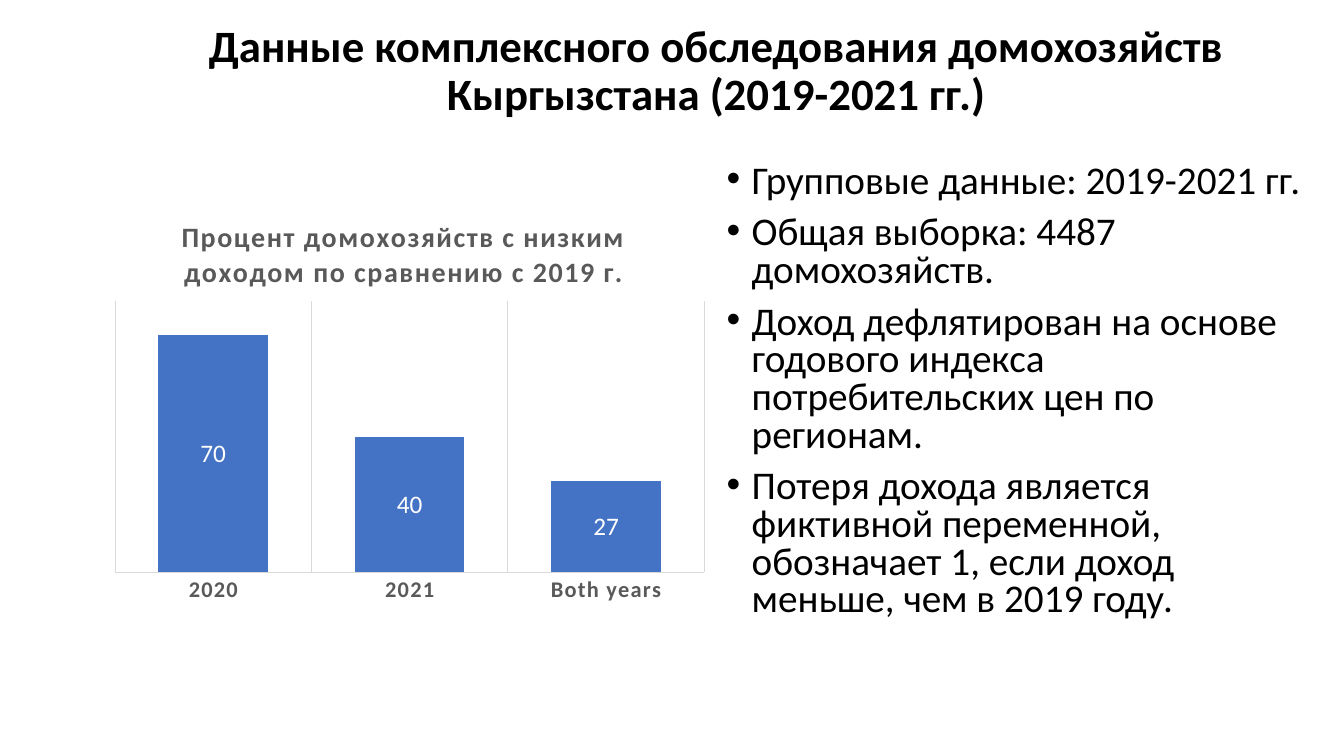
from dataclasses import dataclass

from lxml import etree
from pptx import Presentation
from pptx.chart.data import CategoryChartData
from pptx.dml.color import RGBColor
from pptx.enum.chart import XL_CHART_TYPE, XL_LABEL_POSITION, XL_TICK_MARK
from pptx.enum.text import MSO_ANCHOR, PP_ALIGN
from pptx.oxml import parse_xml
from pptx.oxml.ns import nsdecls, qn
from pptx.util import Cm, Pt

STACKED = XL_CHART_TYPE.COLUMN_STACKED
LABEL_CENTER = XL_LABEL_POSITION.CENTER
NO_TICK = XL_TICK_MARK.NONE
MIDDLE = MSO_ANCHOR.MIDDLE
CENTER = PP_ALIGN.CENTER


@dataclass(frozen=True)
class Theme:
    font: str = "Calibri"
    text: RGBColor = RGBColor(0, 0, 0)
    muted: RGBColor = RGBColor(0x59, 0x59, 0x59)
    grid: RGBColor = RGBColor(0xD9, 0xD9, 0xD9)
    bar: RGBColor = RGBColor(0x44, 0x72, 0xC4)
    label: RGBColor = RGBColor(0xFF, 0xFF, 0xFF)
    title_size: Pt = Pt(32)
    body_size: Pt = Pt(28)
    chart_title_size: Pt = Pt(20)
    label_size: Pt = Pt(18)
    axis_size: Pt = Pt(16)


theme = Theme()


def set_font(font, size, color, bold=False):
    font.name, font.size, font.bold = theme.font, size, bold
    font.color.rgb = color


def manual_layout(**values):
    """Return a chart layout element with positions as fractions of the chart."""
    items = "".join(f'<c:{key} val="{val}"/>' for key, val in values.items())
    return parse_xml(f'<c:layout {nsdecls("c")}><c:manualLayout>{items}'
                     "</c:manualLayout></c:layout>")


prs = Presentation()
prs.slide_width, prs.slide_height = Cm(33.87), Cm(19.05)
s = prs.slides.add_slide(prs.slide_layouts[6])

# Heading
tf = s.shapes.add_textbox(Cm(3.45), Cm(-0.03), Cm(29.21), Cm(3.68)).text_frame
tf.word_wrap = True
tf.vertical_anchor = MIDDLE
p = tf.paragraphs[0]
p.text = "Данные комплексного обследования домохозяйств Кыргызстана (2019-2021 гг.)"
p.alignment = CENTER
p.line_spacing = 0.9
set_font(p.font, theme.title_size, theme.text, bold=True)

# Bullets
notes = [
    "Групповые данные: 2019-2021 гг.",
    "Общая выборка: 4487 домохозяйств.",
    "Доход дефлятирован на основе годового индекса потребительских цен по регионам.",
    "Потеря дохода является фиктивной переменной, обозначает 1, "
    "если доход меньше, чем в 2019 году.",
]
tf = s.shapes.add_textbox(Cm(18.06), Cm(4.01), Cm(15.47), Cm(12.09)).text_frame
tf.word_wrap = True
for i, note in enumerate(notes):
    p = tf.add_paragraph() if i else tf.paragraphs[0]
    p.text = note
    p.line_spacing = 0.8
    p.space_before = Pt(10)
    set_font(p.font, theme.body_size, theme.text)
    pPr = p._p.get_or_add_pPr()
    pPr.set("marL", str(Cm(0.635)))
    pPr.set("indent", str(-Cm(0.635)))
    bullet_font = parse_xml(f'<a:buFont {nsdecls("a")} typeface="Arial"/>')
    bullet = parse_xml(f'<a:buChar {nsdecls("a")} char="•"/>')
    at = pPr.index(pPr.find(qn("a:defRPr")))
    pPr[at:at] = [bullet_font, bullet]

# Chart
data = CategoryChartData(number_format="#,##0")
data.categories = ["2020", "2021", "Both years"]
data.add_series("Series 1", [70, 40, 27])
chart = s.shapes.add_chart(
    STACKED, Cm(2.59), Cm(4.7), Cm(15.47), Cm(10.69), data).chart
chart.has_legend = False
set_font(chart.font, Pt(10), theme.text)

chart.has_title = True
p = chart.chart_title.text_frame.paragraphs[0]
p.text = "Процент домохозяйств с низким доходом по сравнению с 2019 г."
set_font(p.font, theme.chart_title_size, theme.muted, bold=True)
p.font._element.set("spc", "100")
title = chart.chart_title._element
for layout in title.findall(qn("c:layout")):
    title.remove(layout)
title.find(qn("c:tx")).addnext(
    manual_layout(xMode="edge", yMode="edge", x=0.12, y=0.06))
chart.chart_title.include_in_layout = False

plot_area = chart._chartSpace.chart.plotArea
for layout in plot_area.findall(qn("c:layout")):
    plot_area.remove(layout)
plot_area.insert(0, manual_layout(
    layoutTarget="inner", xMode="edge", yMode="edge", x=0.02, y=0.27, w=0.96, h=0.64))

axis = chart.category_axis
axis.major_tick_mark = axis.minor_tick_mark = NO_TICK
axis.has_major_gridlines = True
for line in (axis.format.line, axis.major_gridlines.format.line):
    line.color.rgb = theme.grid
    line.width = Pt(0.75)
axis_font = axis.tick_labels.font
set_font(axis_font, theme.axis_size, theme.muted, bold=True)
axis_font._element.set("spc", "100")

axis = chart.value_axis
axis.minimum_scale, axis.maximum_scale = 0, 80
axis.has_major_gridlines = False
axis.visible = False

plot = chart.plots[0]
plot.gap_width, plot.overlap = 79, 100
plot.vary_by_categories = False
series = plot.series[0]
series.format.fill.solid()
series.format.fill.fore_color.rgb = theme.bar
labels = series.data_labels
labels.show_value = True
labels.position = LABEL_CENTER
labels.number_format = "#,##0"
labels.number_format_is_linked = False
set_font(labels.font, theme.label_size, theme.label)

etree.cleanup_namespaces(plot_area)
prs.save("out.pptx")
